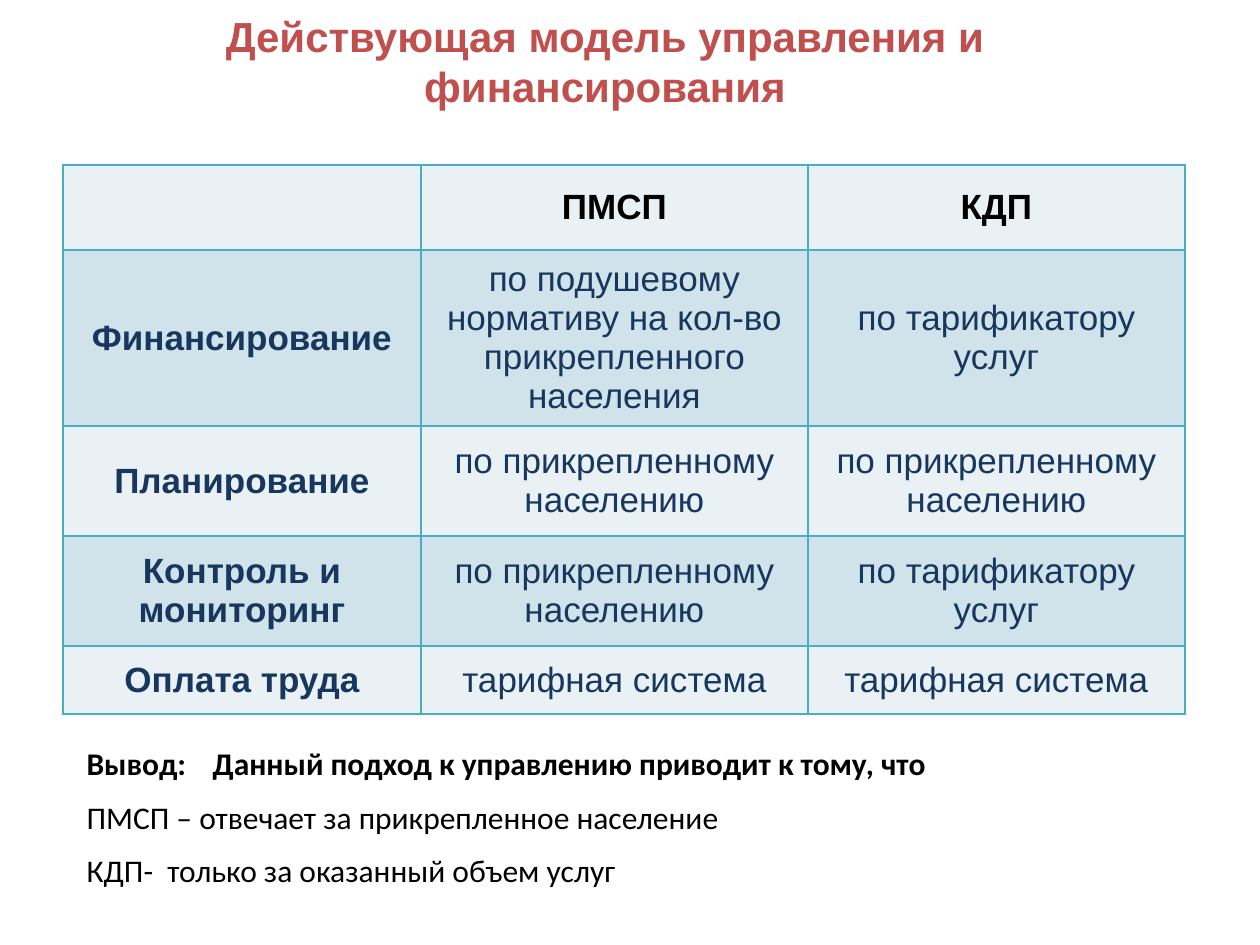
from pptx import Presentation
from pptx.dml.color import RGBColor
from pptx.enum.text import MSO_ANCHOR, MSO_AUTO_SIZE, PP_ALIGN
from pptx.oxml import parse_xml
from pptx.oxml.ns import nsdecls
from pptx.util import Emu, Pt

PX_PER_INCH = 126


def px(length):
    return Emu(round(length * 914400 / PX_PER_INCH))


def color(value):
    return RGBColor.from_string(value)


class SlideBuilder:
    HEADING = "C0504D"
    INK = "000000"
    NAVY = "17375E"
    GRID = "4BACC6"
    BANDS = ("E9F1F5", "D0E3EA")

    def __init__(self, deck):
        self.page = deck.slides.add_slide(deck.slide_layouts[1])

    def place(self, box, left, top, width, height):
        box.left, box.top = px(left), px(top)
        box.width, box.height = px(width), px(height)

    def style(self, para, font_name, size, ink, bold, align):
        para.alignment = align
        font = para.font
        font.name, font.size, font.bold = font_name, Pt(size), bold
        font.color.rgb = color(ink)

    def title(self, text, *area):
        box = self.page.shapes.title
        self.place(box, *area)
        frame = box.text_frame
        frame.text = text
        frame.auto_size = MSO_AUTO_SIZE.NONE
        frame.vertical_anchor = MSO_ANCHOR.MIDDLE
        self.style(frame.paragraphs[0], "Arial", 24, self.HEADING, True, PP_ALIGN.CENTER)

    def conclusion(self, lines, tab, *area):
        box = self.page.placeholders[1]
        self.place(box, *area)
        frame = box.text_frame
        frame.text = "\n".join(lines)
        frame.auto_size = MSO_AUTO_SIZE.SHAPE_TO_FIT_TEXT
        for index, para in enumerate(frame.paragraphs):
            # Plain lines without bullets, with a tab stop after the label
            props = para._p.get_or_add_pPr()
            props.set("marL", "0")
            props.set("indent", "0")
            props.append(parse_xml(f"<a:buNone {nsdecls('a')}/>"))
            props.append(parse_xml(
                f"<a:tabLst {nsdecls('a')}><a:tab pos='{px(tab)}' algn='l'/></a:tabLst>"))
            para.space_before = Pt(9)
            self.style(para, "Calibri", 18, self.INK, index == 0, PP_ALIGN.LEFT)

    def borders(self, cell):
        props = cell._tc.get_or_add_tcPr()
        for position, side in enumerate(("lnL", "lnR", "lnT", "lnB")):
            props.insert(position, parse_xml(
                f"<a:{side} {nsdecls('a')} w='{Pt(1)}'><a:solidFill>"
                f"<a:srgbClr val='{self.GRID}'/></a:solidFill></a:{side}>"))

    def table(self, rows, left, top, widths, heights):
        table = self.page.shapes.add_table(
            len(heights), len(widths), px(left), px(top),
            px(sum(widths)), px(sum(heights))).table
        table.first_row = table.horz_banding = False
        for column, width in zip(table.columns, widths):
            column.width = px(width)
        for row, height in zip(table.rows, heights):
            row.height = px(height)
        for r, texts in enumerate(rows):
            for c, text in enumerate(texts):
                cell = table.cell(r, c)
                cell.fill.solid()
                cell.fill.fore_color.rgb = color(self.BANDS[r % 2])
                cell.vertical_anchor = MSO_ANCHOR.MIDDLE
                cell.margin_top = cell.margin_bottom = px(4)
                cell.text = text
                self.style(cell.text_frame.paragraphs[0], "Arial", 20,
                           self.NAVY if r else self.INK, r == 0 or c == 0,
                           PP_ALIGN.CENTER)
                self.borders(cell)


def main():
    deck = Presentation()
    deck.slide_width, deck.slide_height = px(1260), px(945)
    slide = SlideBuilder(deck)

    # Heading
    slide.title("Действующая модель управления и финансирования", 213, 6, 784, 110)

    # Comparison of the two kinds of care
    attached = "по прикрепленному населению"
    tariff = "по тарификатору услуг"
    system = "тарифная система"
    slide.table([
        ("", "ПМСП", "КДП"),
        ("Финансирование",
         "по подушевому нормативу на кол-во прикрепленного населения", tariff),
        ("Планирование", attached, attached),
        ("Контроль и мониторинг", attached, tariff),
        ("Оплата труда", system, system),
    ], 63, 165, (358, 387, 377), (85, 169, 110, 110, 68))

    # Conclusion
    slide.conclusion([
        "Вывод:\tДанный подход к управлению приводит к тому, что",
        "ПМСП – отвечает за прикрепленное население",
        "КДП-  только за оказанный объем услуг",
    ], 135, 74, 738, 1101, 164)

    deck.save("out.pptx")


if __name__ == "__main__":
    main()
